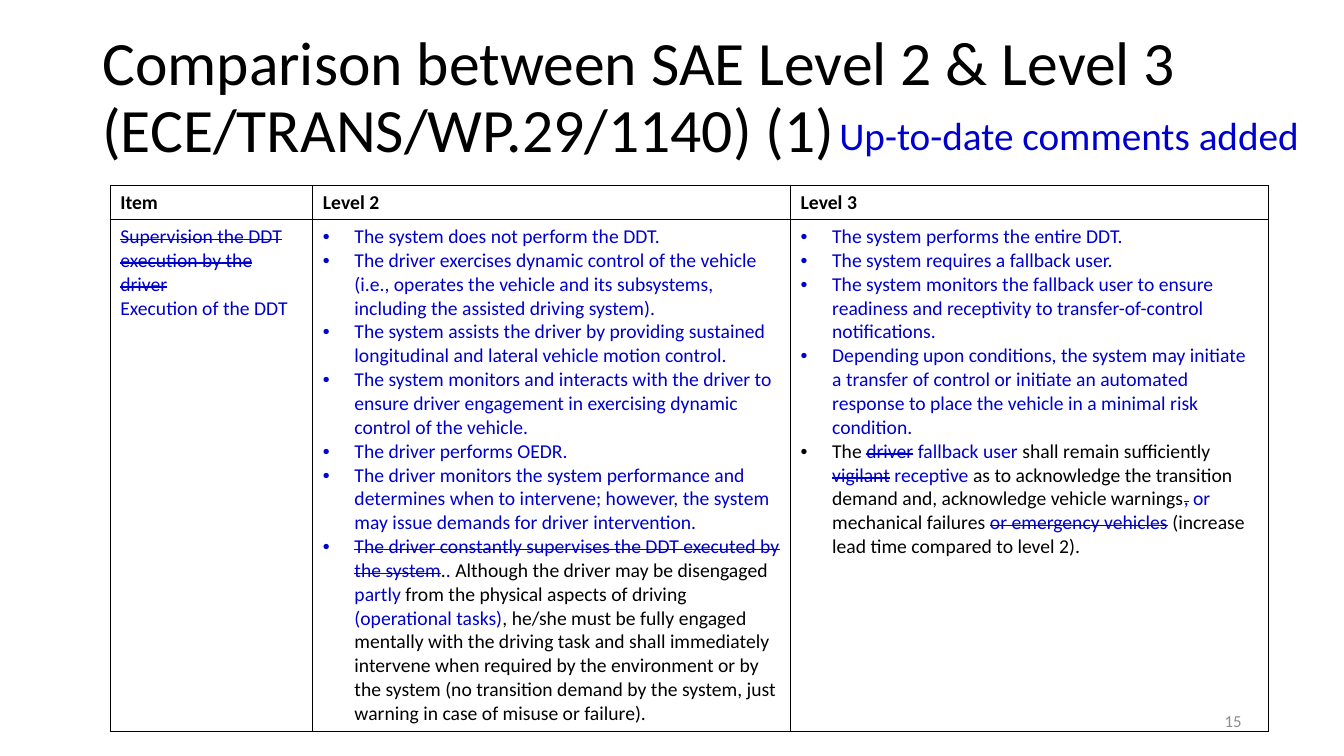
"""Build the slide comparing SAE Level 2 and Level 3."""
from lxml import etree
from pptx import Presentation
from pptx.dml.color import RGBColor
from pptx.enum.text import MSO_ANCHOR, PP_ALIGN
from pptx.oxml.ns import qn
from pptx.util import Pt

PX = 9525
TOP, MIDDLE = MSO_ANCHOR.TOP, MSO_ANCHOR.MIDDLE
LEFT, RIGHT = PP_ALIGN.LEFT, PP_ALIGN.RIGHT
BLACK, BLUE, GREY = "000000", "0000CC", "8C8C8C"
KEPT, ADDED, CUT, HEAD = "kept", "added", "cut", "head"


def rgb(value):
    return RGBColor.from_string(value)


def add_run(p, text, size, color):
    r = p.add_run()
    r.text = text
    r.font.name = "Calibri"
    r.font.size = Pt(size)
    r.font.color.rgb = rgb(color)
    return r


prs = Presentation()
prs.slide_width, prs.slide_height = 1280 * PX, 720 * PX
s = prs.slides.add_slide(prs.slide_layouts[6])

level_2 = [
    [("The system does not perform the DDT.", ADDED)],
    [("The driver exercises dynamic control of the vehicle (i.e., operates the vehicle "
      "and its subsystems, including the assisted driving system).", ADDED)],
    [("The system assists the driver by providing sustained longitudinal and lateral "
      "vehicle motion control.", ADDED)],
    [("The system monitors and interacts with the driver to ensure driver engagement "
      "in exercising dynamic control of the vehicle.", ADDED)],
    [("The driver performs OEDR.", ADDED)],
    [("The driver monitors the system performance and determines when to intervene; "
      "however, the system may issue demands for driver intervention.", ADDED)],
    [("The driver constantly supervises the DDT executed by the system", CUT),
     (".", KEPT), (". ", ADDED),
     ("Although the driver may be disengaged ", KEPT), ("partly", ADDED),
     (" from the physical aspects of driving ", KEPT), ("(operational tasks)", ADDED),
     (", he/she must be fully engaged mentally with the driving task and shall "
      "immediately intervene when required by the environment or by the system (no "
      "transition demand by the system, just warning in case of misuse or failure).", KEPT)],
]
level_3 = [
    [("The system performs the entire DDT.", ADDED)],
    [("The system requires a fallback user.", ADDED)],
    [("The system monitors the fallback user to ensure readiness and receptivity to "
      "transfer-of-control notifications.", ADDED)],
    [("Depending upon conditions, the system may initiate a transfer of control or "
      "initiate an automated response to place the vehicle in a minimal risk "
      "condition.", ADDED)],
    [("The ", KEPT), ("driver", CUT), (" ", KEPT), ("fallback user ", ADDED),
     ("shall remain sufficiently ", KEPT), ("vigilant", CUT), (" receptive ", ADDED),
     ("as to acknowledge the transition demand and, acknowledge vehicle warnings", KEPT),
     (",", CUT), (" or ", ADDED), ("mechanical failures ", KEPT),
     ("or emergency vehicles", CUT), (" (increase lead time compared to level 2).", KEPT)],
]
item = [
    [("Supervision the DDT execution by the driver", CUT)],
    [("Execution of the DDT", ADDED)],
]
header = [[[(name, HEAD)]] for name in ("Item", "Level 2", "Level 3")]
rows = [header, [item, level_2, level_3]]

frame = s.shapes.add_table(2, 3, 105 * PX, 177 * PX, 1103 * PX, 519 * PX)
table = frame.table
table.first_row = table.horz_banding = False
for col, width in zip(table.columns, (193, 455, 455)):
    col.width = width * PX
for row, height in zip(table.rows, (32, 487)):
    row.height = height * PX

for i, row in enumerate(rows):
    for j, paragraphs in enumerate(row):
        cell = table.cell(i, j)
        tcPr = cell._tc.get_or_add_tcPr()
        for side in ("lnL", "lnR", "lnT", "lnB"):
            ln = etree.SubElement(tcPr, qn(f"a:{side}"), w=str(Pt(1)))
            fill = etree.SubElement(ln, qn("a:solidFill"))
            etree.SubElement(fill, qn("a:srgbClr"), val=BLACK)
        cell.fill.background()
        tf = cell.text_frame
        for k, runs in enumerate(paragraphs):
            p = tf.add_paragraph() if k else tf.paragraphs[0]
            if i and j:
                pPr = p._p.get_or_add_pPr()
                pPr.set("marL", str(30 * PX))
                pPr.set("indent", str(-30 * PX))
                etree.SubElement(pPr, qn("a:buFont"), typeface="Arial")
                etree.SubElement(pPr, qn("a:buChar"), char="•")
            for text, status in runs:
                r = add_run(p, text, 14, BLUE if status in (ADDED, CUT) else BLACK)
                r.font.bold = status == HEAD
                if status == CUT:
                    r._r.get_or_add_rPr().set("strike", "sngStrike")

labels = [
    ("Comparison between SAE Level 2 & Level 3 (ECE/TRANS/WP.29/1140) (1)",
     88, 25, 1104, 139, 44, BLACK, MIDDLE, LEFT, 0.9),
    ("15", 904, 667, 288, 38, 12, GREY, MIDDLE, RIGHT, 1.0),
    ("Up-to-date comments added", 790, 101, 658, 55, 28, BLUE, TOP, LEFT, 1.0),
]
for text, x, y, w, h, size, color, anchor, align, spacing in labels:
    sp = s.shapes.add_textbox(x * PX, y * PX, w * PX, h * PX)
    tf = sp.text_frame
    tf.word_wrap = True
    tf.vertical_anchor = anchor
    p = tf.paragraphs[0]
    p.alignment = align
    p.line_spacing = spacing
    add_run(p, text, size, color)

prs.save("out.pptx")
